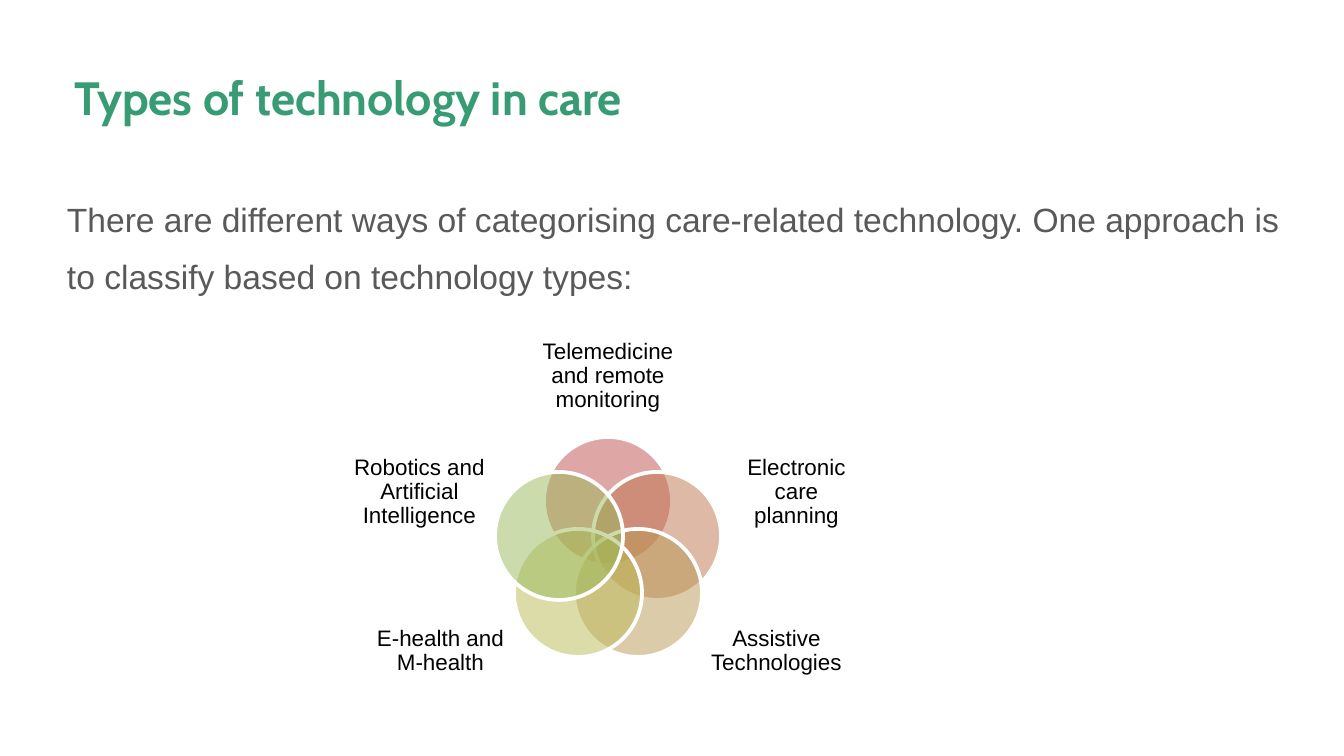
"""Builds a slide on types of care technology with a five-circle Venn diagram."""
from math import cos, radians, sin

from lxml import etree
from pptx import Presentation
from pptx.dml.color import RGBColor
from pptx.enum.shapes import MSO_SHAPE
from pptx.enum.text import MSO_ANCHOR, MSO_AUTO_SIZE, PP_ALIGN
from pptx.oxml.ns import qn
from pptx.util import Emu, Pt

OVAL = MSO_SHAPE.OVAL
TOP, MIDDLE = MSO_ANCHOR.TOP, MSO_ANCHOR.MIDDLE
LEFT, CENTER = PP_ALIGN.LEFT, PP_ALIGN.CENTER
GROW, FIXED = MSO_AUTO_SIZE.SHAPE_TO_FIT_TEXT, MSO_AUTO_SIZE.NONE
THEME = {
    "title_font": "Cabin", "body_font": "Arial",
    "title_size": 25, "body_size": 18, "label_size": 12,
    "title": "379C73", "body": "595959", "label": "000000", "outline": "FFFFFF",
}


def px(value):
    return Emu(round(value * 914400 / 134.4))


def add_text(shapes, text, box, *, size, color, font=THEME["body_font"], bold=False,
             spacing=1.4, align=LEFT, anchor=TOP, fit=GROW):
    holder = shapes.add_textbox(*map(px, box))
    frame = holder.text_frame
    frame.word_wrap = True
    frame.auto_size = fit
    frame.vertical_anchor = anchor
    frame.margin_left = frame.margin_top = frame.margin_right = frame.margin_bottom = 0
    paragraph = frame.paragraphs[0]
    paragraph.alignment = align
    paragraph.line_spacing = spacing
    run = paragraph.add_run()
    run.text = text
    run.font.name = font
    run.font.size = Pt(size)
    run.font.bold = bold
    run.font.color.rgb = RGBColor.from_string(color)


deck = Presentation()
deck.slide_width, deck.slide_height = px(1344), px(756)
slide = deck.slides.add_slide(deck.slide_layouts[6])

add_text(slide.shapes, "Types of technology in care", (75, 46, 1067, 79),
         size=THEME["title_size"], color=THEME["title"], font=THEME["title_font"], bold=True)
add_text(slide.shapes,
         "There are different ways of categorising care-related technology. "
         "One approach is to classify based on technology types:",
         (67, 183, 1216, 171), size=THEME["body_size"], color=THEME["body"])

technologies = [
    ("Telemedicine and remote monitoring", "BF504D", (534, 333, 148, 86)),
    ("Electronic care planning", "BD754F", (730, 446, 133, 93)),
    ("Assistive Technologies", "BB9952", (710, 605, 133, 93)),
    ("E-health and M-health", "BABA55", (374, 605, 133, 93)),
    ("Robotics and Artificial Intelligence", "99B958", (353, 446, 133, 93)),
]
center_x, center_y, ring_radius, diameter = 608, 552, 51, 128
venn = slide.shapes.add_group_shape()

for index, (technology, color, label_box) in enumerate(technologies):
    angle = radians(index * 360 / len(technologies))
    left = round(center_x + ring_radius * sin(angle) - diameter / 2)
    top = round(center_y - ring_radius * cos(angle) - diameter / 2)
    circle = venn.shapes.add_shape(OVAL, px(left), px(top), px(diameter), px(diameter))
    circle.shadow.inherit = False
    circle.fill.solid()
    circle.fill.fore_color.rgb = RGBColor.from_string(color)
    fill_color = circle.fill._xPr.find(qn("a:solidFill")).find(qn("a:srgbClr"))
    etree.SubElement(fill_color, qn("a:alpha"), val="50000")
    circle.line.color.rgb = RGBColor.from_string(THEME["outline"])
    circle.line.width = Pt(2)
    add_text(venn.shapes, technology, label_box, size=THEME["label_size"],
             color=THEME["label"], spacing=0.9, align=CENTER, anchor=MIDDLE, fit=FIXED)

deck.save("out.pptx")
